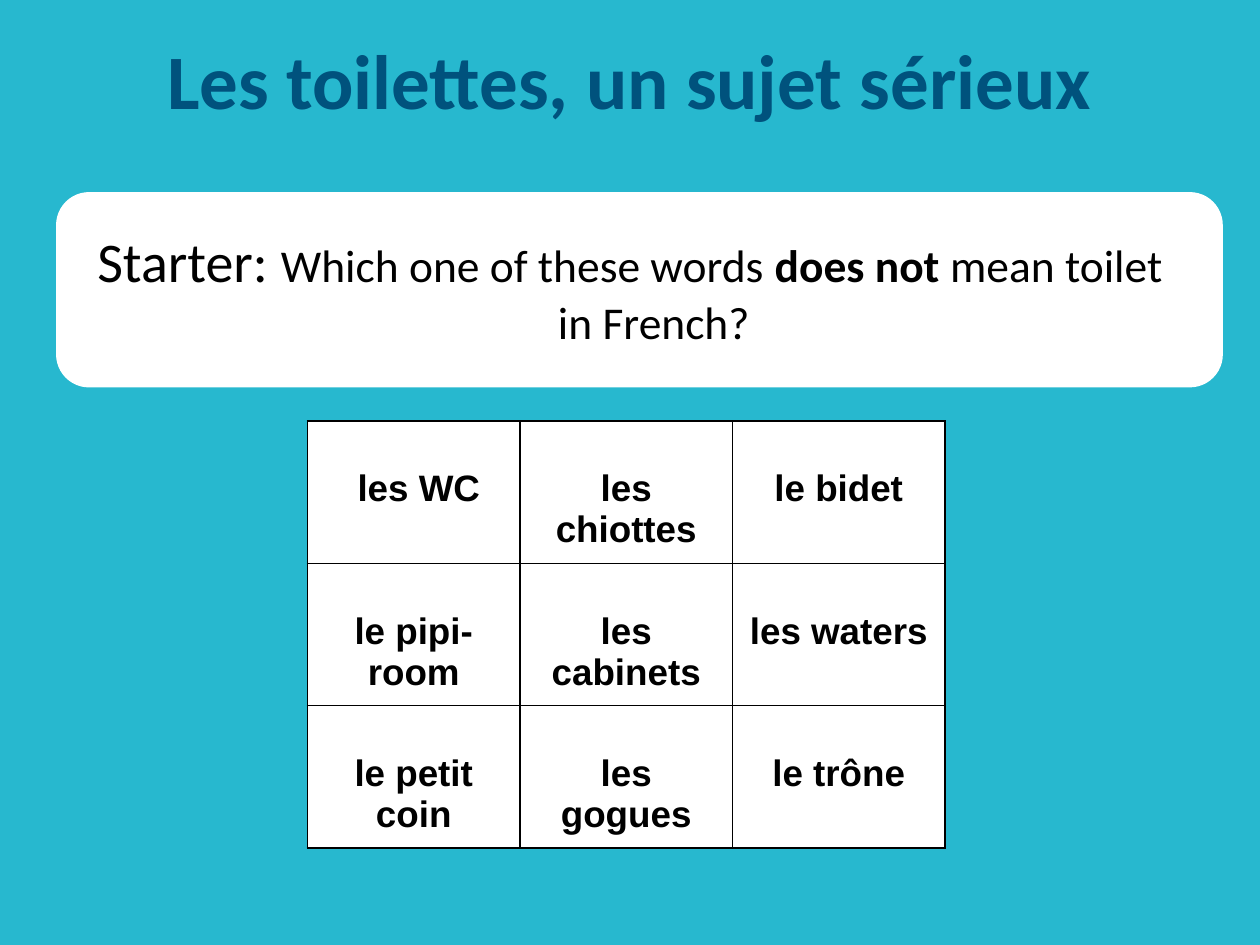
from lxml.etree import SubElement
from pptx import Presentation
from pptx.dml.color import RGBColor
from pptx.enum.shapes import MSO_SHAPE
from pptx.enum.text import MSO_ANCHOR, PP_ALIGN
from pptx.oxml.ns import qn
from pptx.util import Inches, Pt

HUES = {"back": "27B8CF", "title": "00527D", "ink": "000000", "card": "FFFFFF"}
WORDS = [
    [" les WC", "les chiottes", "le bidet"],
    ["le pipi-room", "les cabinets", "les waters"],
    ["le petit coin", "les gogues", "le trône"],
]


def color(name):
    """Return the named colour."""
    return RGBColor.from_string(HUES[name])


def paint(fill, name):
    """Make a fill solid in the named colour."""
    fill.solid()
    fill.fore_color.rgb = color(name)


def write(para, text, size=26, bold=False, font="Calibri", hue="ink"):
    """Add a formatted run to a centred paragraph."""
    para.alignment = PP_ALIGN.CENTER
    run = para.add_run()
    run.text = text
    run.font.size = Pt(size)
    run.font.bold = bold
    run.font.name = font
    run.font.color.rgb = color(hue)


def add_box(slide, box, anchor=MSO_ANCHOR.TOP):
    """Add a wrapping text box and return its first paragraph."""
    frame = slide.shapes.add_textbox(*map(Inches, box)).text_frame
    frame.word_wrap = True
    frame.vertical_anchor = anchor
    return frame.paragraphs[0]


def add_title(slide, box):
    """Add the slide title."""
    para = add_box(slide, box, MSO_ANCHOR.MIDDLE)
    write(para, "Les toilettes, un sujet sérieux", size=44, bold=True, hue="title")


def add_card(slide, box):
    """Add the white rounded card behind the question."""
    card = slide.shapes.add_shape(MSO_SHAPE.ROUNDED_RECTANGLE, *map(Inches, box))
    card.shadow.inherit = False
    paint(card.fill, "card")
    card.line.color.rgb = color("card")
    card.line.width = Pt(0.75)


def add_task(slide, box):
    """Add the starter question with a hanging indent."""
    para = add_box(slide, box)
    props = para._p.get_or_add_pPr()
    props.set("marL", str(Inches(0.38)))
    props.set("indent", str(Inches(-0.38)))
    write(para, "Starter: ", size=32)
    write(para, "Which one of these words ")
    write(para, "does not ", bold=True)
    write(para, "mean toilet in French?")


def add_edges(cell):
    """Draw thin dark borders on all sides of a cell."""
    props = cell._tc.get_or_add_tcPr()
    for side in ("lnL", "lnR", "lnT", "lnB"):
        line = SubElement(props, qn(f"a:{side}"), w=str(Pt(1)))
        fill = SubElement(line, qn("a:solidFill"))
        SubElement(fill, qn("a:srgbClr"), val=HUES["ink"])


def add_grid(slide, box, words):
    """Add the table of words with equal cells."""
    left, top, width, height = map(Inches, box)
    rows, cols = len(words), len(words[0])
    table = slide.shapes.add_table(rows, cols, left, top, width, height).table
    for i, row in enumerate(words):
        for j, word in enumerate(row):
            cell = table.cell(i, j)
            cell.margin_top = Inches(0.38)
            add_edges(cell)
            paint(cell.fill, "card")
            write(cell.text_frame.paragraphs[0], word, size=21, bold=True, font="Arial")


def main():
    """Build and save the slide."""
    deck = Presentation()
    deck.slide_width, deck.slide_height = Inches(10), Inches(7.5)
    slide = deck.slides.add_slide(deck.slide_layouts[6])
    paint(slide.background.fill, "back")
    add_card(slide, (0.45, 1.53, 9.25, 1.54))
    add_title(slide, (0.5, 0, 9, 1.25))
    add_task(slide, (0.5, 1.75, 9, 4.95))
    add_grid(slide, (2.44, 3.34, 5.06, 3.36), WORDS)
    deck.save("out.pptx")


if __name__ == "__main__":
    main()
